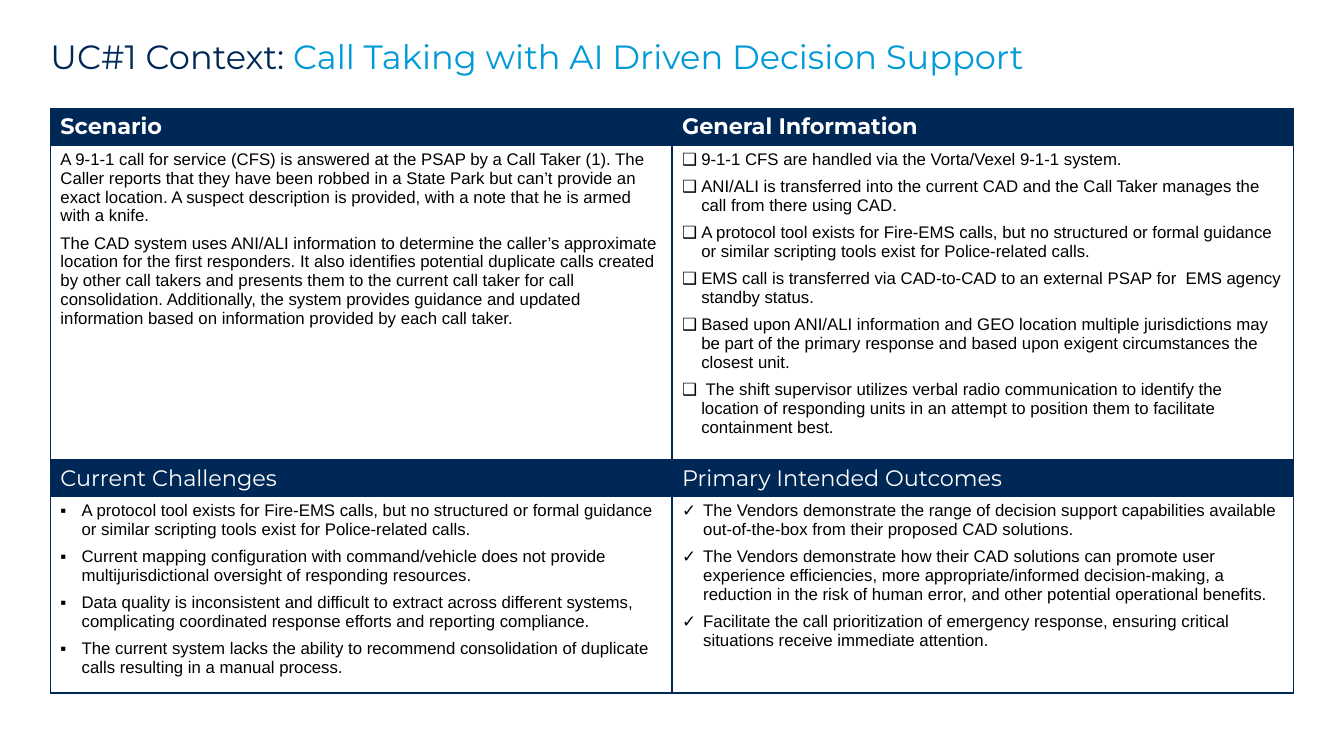
from dataclasses import dataclass

from lxml.etree import SubElement
from pptx import Presentation
from pptx.dml.color import RGBColor
from pptx.enum.text import MSO_ANCHOR as Anchor
from pptx.oxml.ns import qn
from pptx.table import _Cell as Cell
from pptx.text.text import TextFrame, _Paragraph as Paragraph
from pptx.util import Emu, Inches, Pt

NAVY = RGBColor(0x00, 0x28, 0x56)
SKY = RGBColor(0x00, 0x9A, 0xD7)
WHITE = RGBColor(0xFF, 0xFF, 0xFF)
BLACK = RGBColor(0x00, 0x00, 0x00)
HEADING_FONT, BODY_FONT = "Montserrat", "Arial"

SLIDE_W, SLIDE_H = Inches(13.33), Inches(7.5)
MARGIN = 0.0375  # share of the slide width
TITLE_TOP, TITLE_HEIGHT = 0.053, 0.064  # shares of the slide height
TABLE_TOP = 0.143
HEADING_ROW = 0.047
BODY_ROWS = (0.415, 0.221)


@dataclass(frozen=True)
class Panel:
    heading: str
    points: tuple[str, ...]
    bullet: str = ""
    indent: float = 0.0
    bold: bool = False


PANELS = (
    (
        Panel("Scenario", (
            "A 9-1-1 call for service (CFS) is answered at the PSAP by a Call Taker (1). The Caller reports that "
            "they have been robbed in a State Park but can’t provide an exact location. A suspect description is "
            "provided, with a note that he is armed with a knife.",
            "The CAD system uses ANI/ALI information to determine the caller’s approximate location for the first "
            "responders. It also identifies potential duplicate calls created by other call takers and presents "
            "them to the current call taker for call consolidation. Additionally, the system provides guidance and "
            "updated information based on information provided by each call taker.",
        ), bold=True),
        Panel("General Information", (
            "9-1-1 CFS are handled via the Vorta/Vexel 9-1-1 system.",
            "ANI/ALI is transferred into the current CAD and the Call Taker manages the call from there using CAD.",
            "A protocol tool exists for Fire-EMS calls, but no structured or formal guidance or similar scripting "
            "tools exist for Police-related calls.",
            "EMS call is transferred via CAD-to-CAD to an external PSAP for  EMS agency standby status.",
            "Based upon ANI/ALI information and GEO location multiple jurisdictions may be part of the primary "
            "response and based upon exigent circumstances the closest unit.",
            " The shift supervisor utilizes verbal radio communication to identify the location of responding "
            "units in an attempt to position them to facilitate containment best.",
        ), bullet="❑", indent=0.19, bold=True),
    ),
    (
        Panel("Current Challenges", (
            "A protocol tool exists for Fire-EMS calls, but no structured or formal guidance or similar scripting "
            "tools exist for Police-related calls.",
            "Current mapping configuration with command/vehicle does not provide multijurisdictional oversight of "
            "responding resources.",
            "Data quality is inconsistent and difficult to extract across different systems, complicating "
            "coordinated response efforts and reporting compliance.",
            "The current system lacks the ability to recommend consolidation of duplicate calls resulting in a "
            "manual process.",
        ), bullet="▪", indent=0.21),
        Panel("Primary Intended Outcomes", (
            "The Vendors demonstrate the range of decision support capabilities available out-of-the-box from "
            "their proposed CAD solutions.",
            "The Vendors demonstrate how their CAD solutions can promote user experience efficiencies, more "
            "appropriate/informed decision-making, a reduction in the risk of human error, and other potential "
            "operational benefits.",
            "Facilitate the call prioritization of emergency response, ensuring critical situations receive "
            "immediate attention.",
        ), bullet="✓", indent=0.21),
    ),
)


def across(share: float) -> Emu:
    return Emu(round(SLIDE_W * share))


def down(share: float) -> Emu:
    return Emu(round(SLIDE_H * share))


def add_text(paragraph: Paragraph, text: str, *, font: str, size: float, color: RGBColor,
             bold: bool = False) -> None:
    run = paragraph.add_run()
    run.text = text
    run.font.name, run.font.size, run.font.bold = font, Pt(size), bold
    run.font.color.rgb = color


def set_bullet(paragraph: Paragraph, bullet: str, indent: float) -> None:
    properties = paragraph._p.get_or_add_pPr()
    properties.set("marL", str(Inches(indent)))
    properties.set("indent", str(-Inches(indent)))
    SubElement(properties, qn("a:buFont"), typeface=BODY_FONT)
    SubElement(properties, qn("a:buChar"), char=bullet)


def next_paragraph(frame: TextFrame, index: int) -> Paragraph:
    paragraph = frame.add_paragraph() if index else frame.paragraphs[0]
    paragraph.space_after = Pt(6)
    return paragraph


def style_cell(cell: Cell, fill: RGBColor | None = None) -> None:
    properties = cell._tc.get_or_add_tcPr()
    for side in ("a:lnL", "a:lnR", "a:lnT", "a:lnB"):
        border = SubElement(properties, qn(side), w=str(Pt(1)))
        solid = SubElement(border, qn("a:solidFill"))
        SubElement(solid, qn("a:srgbClr"), val=str(NAVY))
    if fill is None:
        cell.fill.background()
    else:
        cell.fill.solid()
        cell.fill.fore_color.rgb = fill


def fill_panel(heading_cell: Cell, body_cell: Cell, panel: Panel) -> None:
    style_cell(heading_cell, NAVY)
    add_text(next_paragraph(heading_cell.text_frame, 0), panel.heading,
             font=HEADING_FONT, size=16, color=WHITE, bold=panel.bold)
    style_cell(body_cell)
    for index, point in enumerate(panel.points):
        paragraph = next_paragraph(body_cell.text_frame, index)
        if panel.bullet:
            set_bullet(paragraph, panel.bullet, panel.indent)
        add_text(paragraph, point, font=BODY_FONT, size=12, color=BLACK)


def main() -> None:
    deck = Presentation()
    deck.slide_width, deck.slide_height = SLIDE_W, SLIDE_H
    slide = deck.slides.add_slide(deck.slide_layouts[6])
    content_width = across(1 - 2 * MARGIN)

    # Title
    title = slide.shapes.add_textbox(across(MARGIN), down(TITLE_TOP), content_width, down(TITLE_HEIGHT)).text_frame
    title.word_wrap, title.vertical_anchor = True, Anchor.TOP
    title.margin_left = title.margin_right = title.margin_top = title.margin_bottom = 0
    headline = title.paragraphs[0]
    headline.line_spacing = 0.9
    for words, color in (("UC#1 Context: ", NAVY), ("Call Taking with AI Driven Decision Support", SKY)):
        add_text(headline, words, font=HEADING_FONT, size=24, color=color)

    # Table of four panels, each a heading above a body
    row_heights = [share for body in BODY_ROWS for share in (HEADING_ROW, body)]
    table = slide.shapes.add_table(len(row_heights), 2, across(MARGIN), down(TABLE_TOP),
                                   content_width, down(sum(row_heights))).table
    table.first_row = table.horz_banding = False
    for row, share in zip(table.rows, row_heights):
        row.height = down(share)
    for band, panels in enumerate(PANELS):
        for column, panel in enumerate(panels):
            fill_panel(table.cell(2 * band, column), table.cell(2 * band + 1, column), panel)

    deck.save("out.pptx")


if __name__ == "__main__":
    main()
